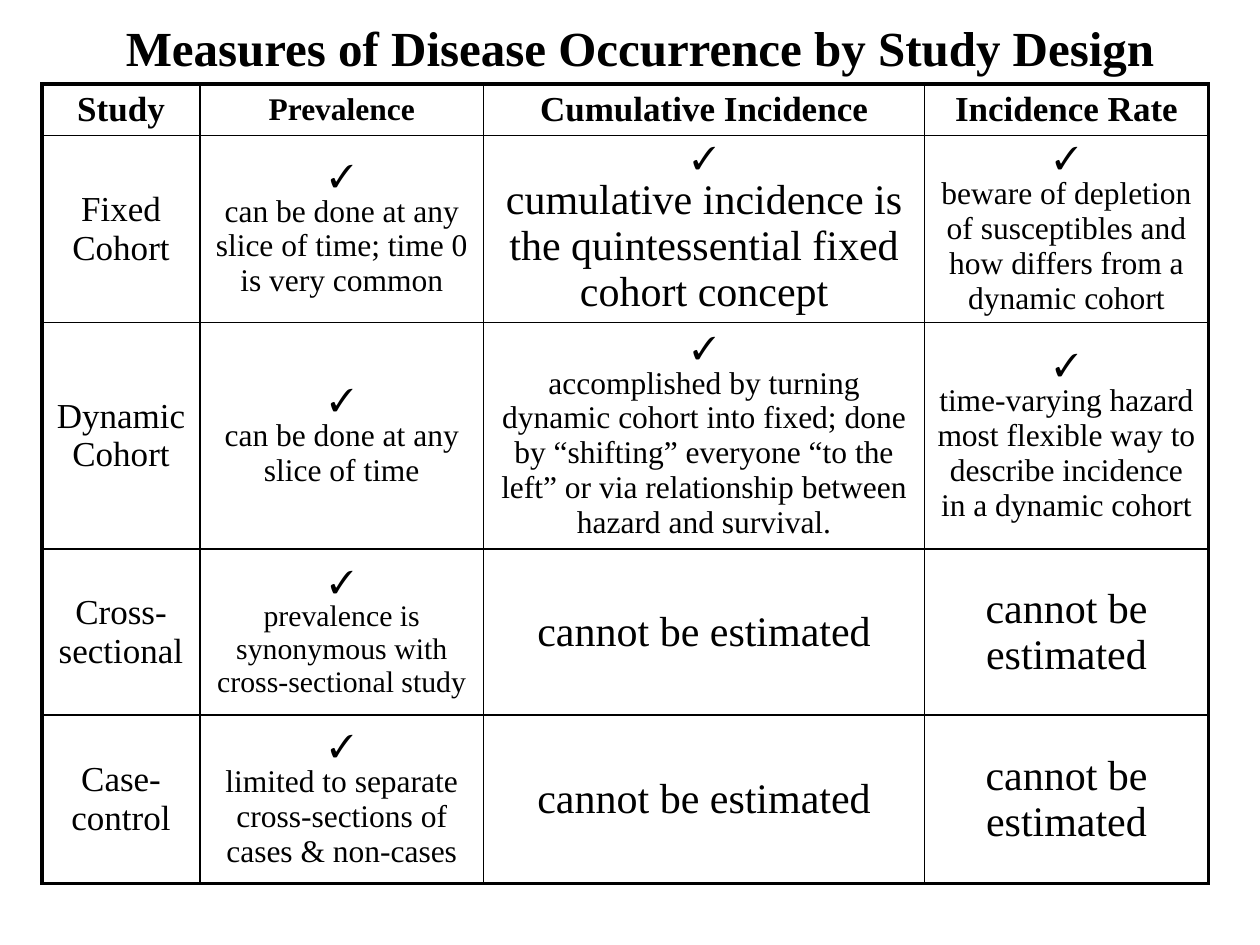
from lxml import etree
from pptx import Presentation
from pptx.dml.color import RGBColor
from pptx.enum.text import MSO_ANCHOR, PP_ALIGN
from pptx.oxml.ns import qn
from pptx.util import Cm, Pt

MIDDLE = MSO_ANCHOR.MIDDLE
CENTER = PP_ALIGN.CENTER
FONT = "Times New Roman"
BLACK = "000000"
THIN, THICK = Pt(1), Pt(2.25)

TITLE = "Measures of Disease Occurrence by Study Design"
CHECK = "✓"
NOT_ESTIMATED = [("cannot be estimated", 24)]
COLUMN_WIDTHS = [3.18, 5.72, 8.89, 5.72]
ROW_HEIGHTS = [0.85, 3.39, 4.57, 3.35, 3.39]


def checked(text, size=18):
    return [(CHECK, 18), (text, size)]


ROWS = [
    [[("Study", 20)], [("Prevalence", 18)],
     [("Cumulative Incidence", 20)], [("Incidence Rate", 20)]],
    [[("Fixed Cohort", 20)],
     checked("can be done at any slice of time; time 0 is very common"),
     checked("cumulative incidence is the quintessential fixed cohort concept", 24),
     checked("beware of depletion of susceptibles and how differs from a dynamic cohort")],
    [[("Dynamic Cohort", 20)],
     checked("can be done at any slice of time"),
     checked("accomplished by turning dynamic cohort into fixed; done by “shifting” "
             "everyone “to the left” or via relationship between hazard and survival."),
     checked("time-varying hazard most flexible way to describe incidence in a dynamic cohort")],
    [[("Cross-sectional", 20)],
     checked("prevalence is synonymous with cross-sectional study", 17),
     NOT_ESTIMATED, NOT_ESTIMATED],
    [[("Case-control", 20)],
     checked("limited to separate cross-sections of cases & non-cases"),
     NOT_ESTIMATED, NOT_ESTIMATED],
]


def rgb(value):
    return RGBColor.from_string(value)


def apply_format(target, values):
    for name, value in values.items():
        setattr(target, name, value)


def write_paragraph(paragraph, text, size, bold):
    paragraph.alignment = CENTER
    run = paragraph.add_run()
    run.text = text
    apply_format(run.font, {"name": FONT, "size": Pt(size), "bold": bold})
    run.font.color.rgb = rgb(BLACK)


def draw_borders(cell, widths):
    properties = cell._tc.get_or_add_tcPr()
    for side, width in widths.items():
        border = etree.SubElement(properties, qn(f"a:ln{side}"), w=str(width))
        fill = etree.SubElement(border, qn("a:solidFill"))
        etree.SubElement(fill, qn("a:srgbClr"), val=BLACK)


def fill_cell(cell, paragraphs, bold, borders):
    cell.vertical_anchor = MIDDLE
    draw_borders(cell, borders)
    cell.fill.background()
    frame = cell.text_frame
    for index, (text, size) in enumerate(paragraphs):
        paragraph = frame.add_paragraph() if index else frame.paragraphs[0]
        write_paragraph(paragraph, text, size, bold)


def add_title(slide):
    title = slide.shapes.title
    apply_format(title, {"left": Cm(0.2), "top": Cm(-0.64),
                         "width": Cm(25.4), "height": Cm(3.18)})
    title.text_frame.vertical_anchor = MIDDLE
    write_paragraph(title.text_frame.paragraphs[0], TITLE, 28, True)


def add_measures_table(slide):
    measures = slide.shapes.add_table(
        len(ROWS), len(COLUMN_WIDTHS), Cm(0.85), Cm(1.69),
        Cm(sum(COLUMN_WIDTHS)), Cm(sum(ROW_HEIGHTS))).table
    apply_format(measures, {"first_row": False, "horz_banding": False})
    for column, width in zip(measures.columns, COLUMN_WIDTHS):
        column.width = Cm(width)
    for row, height in zip(measures.rows, ROW_HEIGHTS):
        row.height = Cm(height)
    last_row, last_column = len(ROWS) - 1, len(COLUMN_WIDTHS) - 1
    for r, study in enumerate(ROWS):
        for c, paragraphs in enumerate(study):
            outer = {"L": c == 0, "R": c == last_column,
                     "T": r == 0, "B": r == last_row}
            borders = {side: THICK if edge else THIN for side, edge in outer.items()}
            fill_cell(measures.cell(r, c), paragraphs, r == 0, borders)


def main():
    presentation = Presentation()
    apply_format(presentation, {"slide_width": Cm(25.4), "slide_height": Cm(19.05)})
    slide = presentation.slides.add_slide(presentation.slide_layouts[5])
    add_title(slide)
    add_measures_table(slide)
    presentation.save("out.pptx")


if __name__ == "__main__":
    main()
